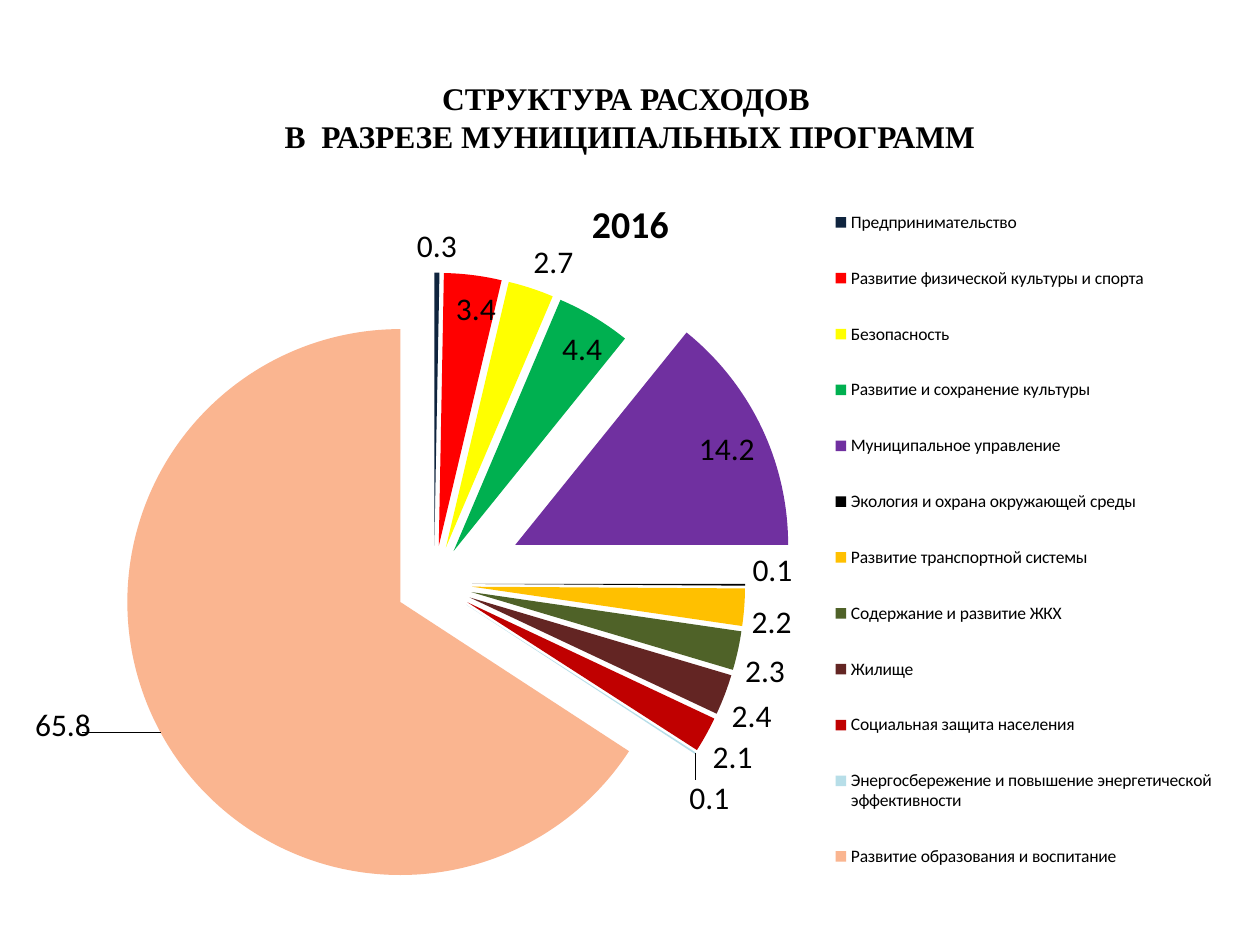
import pptx
import pptx.util
import pptx.chart.data
import pptx.enum.chart
import pptx.enum.text
import pptx.dml.color
import pptx.oxml
import pptx.oxml.ns

THEME = {
    "ink": "000000", "head": "Times New Roman", "body": "Calibri",
    "title": 18, "year": 21.6, "label": 18, "key": 10,
}
SCALE = 914400 / 126
NS = pptx.oxml.ns.nsdecls("c")
POS = pptx.enum.chart.XL_LABEL_POSITION


def px(n):
    return pptx.util.Emu(round(n * SCALE))


def style(font, text=None, run=None, name=THEME["body"], size=THEME["label"], bold=False):
    if run is not None:
        run.text = text
        font = run.font
    font.name = name
    font.size = pptx.util.Pt(size)
    font.bold = bold
    font.color.rgb = pptx.dml.color.RGBColor.from_string(THEME["ink"])


rows = [
    ("Предпринимательство", 0.3, "0F243E"),
    ("Развитие физической культуры и спорта", 3.4, "FF0000"),
    ("Безопасность", 2.7, "FFFF00"),
    ("Развитие и сохранение культуры", 4.4, "00B050"),
    ("Муниципальное управление", 14.2, "7030A0"),
    ("Экология и охрана окружающей среды", 0.1, "000000"),
    ("Развитие транспортной системы", 2.2, "FFC000"),
    ("Содержание и развитие ЖКХ", 2.3, "4F6228"),
    ("Жилище", 2.4, "632523"),
    ("Социальная защита населения", 2.1, "C00000"),
    ("Энергосбережение и повышение энергетической эффективности", 0.1, "B7DEE8"),
    ("Развитие образования и воспитание", 65.8, "FAB590"),
]

deck = pptx.Presentation()
deck.slide_width, deck.slide_height = px(1260), px(945)
slide = deck.slides.add_slide(deck.slide_layouts[5])

title = slide.shapes.title
title.left, title.top, title.width, title.height = px(63), px(38), px(1134), px(158)
frame = title.text_frame
frame.vertical_anchor = pptx.enum.text.MSO_ANCHOR.MIDDLE
para = frame.paragraphs[0]
para.alignment = pptx.enum.text.PP_ALIGN.CENTER
head = {"name": THEME["head"], "size": THEME["title"], "bold": True}
style(None, "СТРУКТУРА РАСХОДОВ ", para.add_run(), **head)
para.add_line_break()
style(None, "В  РАЗРЕЗЕ МУНИЦИПАЛЬНЫХ ПРОГРАММ", para.add_run(), **head)

data = pptx.chart.data.CategoryChartData(number_format="#,##0.0")
data.categories = [row[0] for row in rows]
data.add_series("2016", [row[1] for row in rows])
chart = slide.shapes.add_chart(
    pptx.enum.chart.XL_CHART_TYPE.PIE, px(35), px(169), px(1191), px(741), data
).chart
style(chart.font)
chart.has_title = True
year = chart.chart_title.text_frame.paragraphs[0].add_run()
style(None, "2016", year, size=THEME["year"], bold=True)

chart.has_legend = True
chart.legend.position = pptx.enum.chart.XL_LEGEND_POSITION.RIGHT
chart.legend.include_in_layout = False
style(chart.legend.font, size=THEME["key"])

pie = chart.plots[0]
pie.vary_by_categories = True
series = pie.series[0]
labels = series.data_labels
labels.show_value = True
labels.number_format = "#,##0.0"
labels.number_format_is_linked = False
labels.position = POS.OUTSIDE_END
style(labels.font)

burst = {4: 33}
for i, (name, value, color) in enumerate(rows):
    point = series.points[i]
    point.format.fill.solid()
    point.format.fill.fore_color.rgb = pptx.dml.color.RGBColor.from_string(color)
    point.format.line.fill.background()
    far = burst.get(i, 14)
    node = series._element.findall(pptx.oxml.ns.qn("c:dPt"))[i]
    node.find(pptx.oxml.ns.qn("c:spPr")).addprevious(
        pptx.oxml.parse_xml(f'<c:explosion {NS} val="{far}"/>'))
series._element.find(pptx.oxml.ns.qn("c:dPt")).addprevious(
    pptx.oxml.parse_xml(f'<c:explosion {NS} val="14"/>'))

shifts = {
    1: (0.02, 0.01), 3: (0.01, 0.01), 4: (0, 0), 5: (0, -0.02),
    6: (0, 0.02), 10: (-0.01, 0.03), 11: (-0.06, -0.04),
}
for i in shifts:
    label = series.points[i].data_label
    style(label.font)
    label.position = POS.INSIDE_END if i in (1, 3, 4) else POS.OUTSIDE_END

for node in labels._element.findall(pptx.oxml.ns.qn("c:dLbl")):
    idx = node.find(pptx.oxml.ns.qn("c:idx"))
    x, y = shifts[int(idx.get("val"))]
    if x or y:
        idx.addnext(pptx.oxml.parse_xml(
            f'<c:layout {NS}><c:manualLayout><c:x val="{x}"/><c:y val="{y}"/>'
            '</c:manualLayout></c:layout>'))

area = chart._chartSpace.chart.plotArea
key = chart.legend._element
boxes = [
    (area, '<c:layoutTarget val="inner"/>', 0, 0.14, 0.67, 0.84),
    (key, "", 0.66, 0.01, 0.34, 0.98),
]
for part, target, x, y, w, h in boxes:
    old = part.find(pptx.oxml.ns.qn("c:layout"))
    if old is not None:
        part.remove(old)
    node = pptx.oxml.parse_xml(
        f'<c:layout {NS}><c:manualLayout>{target}'
        '<c:xMode val="edge"/><c:yMode val="edge"/>'
        f'<c:x val="{x}"/><c:y val="{y}"/><c:w val="{w}"/><c:h val="{h}"/>'
        '</c:manualLayout></c:layout>')
    part.insert(1 if part is key else 0, node)

deck.save("out.pptx")
